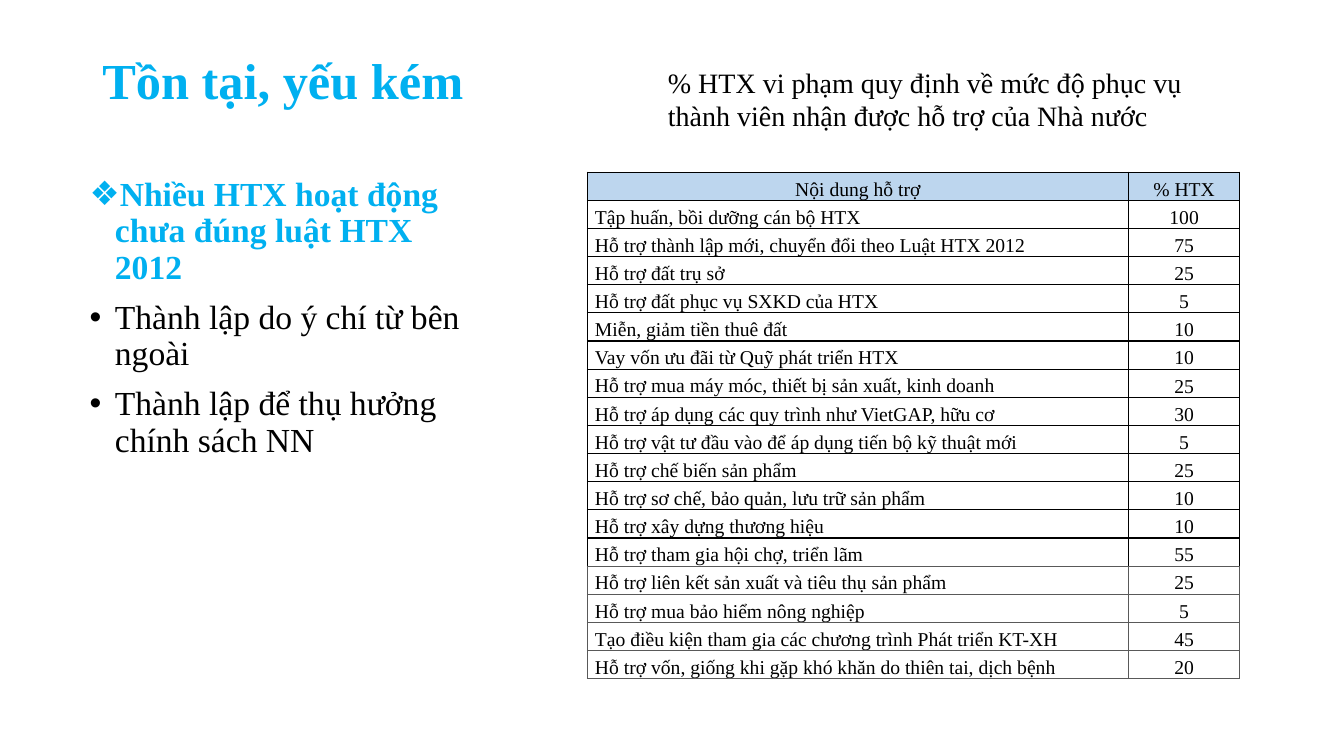
"""Build the slide on shortcomings of cooperatives, with a table of violation rates."""
from lxml import etree
from pptx import Presentation
from pptx.dml.color import RGBColor
from pptx.enum.text import MSO_ANCHOR, PP_ALIGN
from pptx.oxml.ns import qn
from pptx.util import Pt

MIDDLE, TOP = MSO_ANCHOR.MIDDLE, MSO_ANCHOR.TOP
CENTER, JUSTIFY, LEFT = PP_ALIGN.CENTER, PP_ALIGN.JUSTIFY, PP_ALIGN.LEFT
FONT = "Times New Roman"
BLUE, BLACK, GREY, HEADER_BLUE = "00B0F0", "000000", "595959", "BDD6EE"


def color(value):
    return RGBColor.from_string(value)


def write(paragraph, text, size, ink=BLACK, bold=False, align=LEFT, spacing=None):
    paragraph.text = text
    paragraph.alignment = align
    paragraph.line_spacing = spacing
    font = paragraph.runs[0].font
    font.name, font.size, font.bold = FONT, Pt(size), bold
    font.color.rgb = color(ink)


presentation = Presentation()
presentation.slide_width, presentation.slide_height = Pt(960), Pt(540)
slide = presentation.slides.add_slide(presentation.slide_layouts[6])

title = slide.shapes.add_textbox(Pt(66), Pt(29.2), Pt(828), Pt(60.5)).text_frame
title.word_wrap = True
title.vertical_anchor = MIDDLE
write(title.paragraphs[0], "Tồn tại, yếu kém", 36, BLUE, True, spacing=0.9)

shortcomings = [
    ("❖", "Nhiều HTX hoạt động chưa đúng luật HTX 2012", BLUE, True),
    ("•", "Thành lập do ý chí từ bên ngoài", BLACK, False),
    ("•", "Thành lập để thụ hưởng chính sách NN", BLACK, False),
]
body = slide.shapes.add_textbox(Pt(57), Pt(123.3), Pt(297.5), Pt(260)).text_frame
body.word_wrap = True
for index, (bullet, text, ink, bold) in enumerate(shortcomings):
    paragraph = body.paragraphs[0] if index == 0 else body.add_paragraph()
    write(paragraph, text, 24, ink, bold, spacing=0.9)
    paragraph.space_before = Pt(10)
    properties = paragraph._p.get_or_add_pPr()
    properties.set("marL", str(Pt(18)))
    properties.set("indent", str(-Pt(18)))
    etree.SubElement(properties, qn("a:buFont"), typeface="Arial")
    etree.SubElement(properties, qn("a:buChar"), char=bullet)

support_rates = [
    ("Nội dung hỗ trợ", "% HTX"),
    ("Tập huấn, bồi dưỡng cán bộ HTX", "100"),
    ("Hỗ trợ thành lập mới, chuyển đổi theo Luật HTX 2012", "75"),
    ("Hỗ trợ đất trụ sở", "25"),
    ("Hỗ trợ đất phục vụ SXKD của HTX", "5"),
    ("Miễn, giảm tiền thuê đất", "10"),
    ("Vay vốn ưu đãi từ Quỹ phát triển HTX", "10"),
    ("Hỗ trợ mua máy móc, thiết bị sản xuất, kinh doanh", "25"),
    ("Hỗ trợ áp dụng các quy trình như VietGAP, hữu cơ", "30"),
    ("Hỗ trợ vật tư đầu vào để áp dụng tiến bộ kỹ thuật mới", "5"),
    ("Hỗ trợ chế biến sản phẩm", "25"),
    ("Hỗ trợ sơ chế, bảo quản, lưu trữ sản phẩm", "10"),
    ("Hỗ trợ xây dựng thương hiệu", "10"),
    ("Hỗ trợ tham gia hội chợ, triển lãm", "55"),
    ("Hỗ trợ liên kết sản xuất và tiêu thụ sản phẩm", "25"),
    ("Hỗ trợ mua bảo hiểm nông nghiệp", "5"),
    ("Tạo điều kiện tham gia các chương trình Phát triển KT-XH", "45"),
    ("Hỗ trợ vốn, giống khi gặp khó khăn do thiên tai, dịch bệnh", "20"),
]
FIRST_GREY_ROW = 14
ROW_HEIGHT = 20.12
rates = slide.shapes.add_table(
    len(support_rates), 2, Pt(419.6), Pt(123), Pt(466), Pt(ROW_HEIGHT * len(support_rates))
).table
rates.first_row = rates.horz_banding = False
rates.columns[0].width, rates.columns[1].width = Pt(386.5), Pt(79.5)

for row, values in enumerate(support_rates):
    rates.rows[row].height = Pt(ROW_HEIGHT)
    for column, text in enumerate(values):
        cell = rates.cell(row, column)
        is_label = row > 0 and column == 0
        cell.margin_left = cell.margin_right = Pt(5.4)
        cell.margin_top = cell.margin_bottom = 0
        cell.vertical_anchor = TOP if is_label else MIDDLE
        write(cell.text_frame.paragraphs[0], text, 14,
              align=JUSTIFY if is_label else CENTER, spacing=Pt(20))
        for side in ("lnL", "lnR", "lnT", "lnB"):
            grey_from = FIRST_GREY_ROW - 1 if side == "lnB" else FIRST_GREY_ROW
            border = etree.SubElement(cell._tc.get_or_add_tcPr(), qn(f"a:{side}"), w=str(Pt(1)))
            ink = etree.SubElement(border, qn("a:solidFill"))
            etree.SubElement(ink, qn("a:srgbClr"), val=GREY if row >= grey_from else BLACK)
        if row == 0:
            cell.fill.solid()
            cell.fill.fore_color.rgb = color(HEADER_BLUE)
        else:
            cell.fill.background()

caption = slide.shapes.add_textbox(Pt(470), Pt(43), Pt(393), Pt(55.7)).text_frame
caption.word_wrap = True
write(caption.paragraphs[0],
      "% HTX vi phạm quy định về mức độ phục vụ thành viên nhận được hỗ trợ của Nhà nước", 20)

presentation.save("out.pptx")
